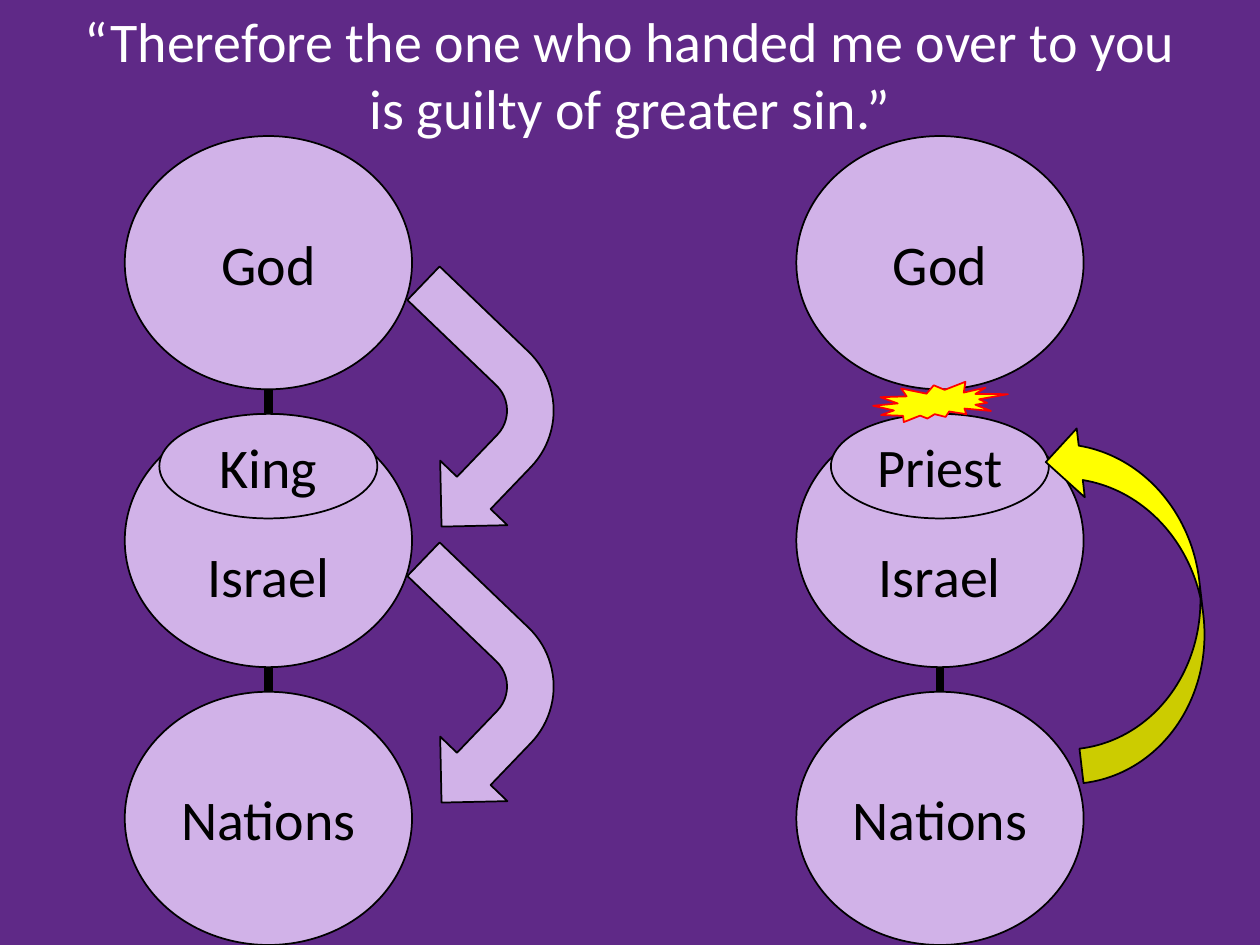
from lxml import etree
from pptx import Presentation
from pptx.dml.color import RGBColor
from pptx.enum.shapes import MSO_CONNECTOR, MSO_SHAPE
from pptx.enum.text import MSO_ANCHOR, PP_ALIGN
from pptx.oxml.ns import qn
from pptx.util import Inches, Pt

OVAL, BENT_ARROW = MSO_SHAPE.OVAL, MSO_SHAPE.BENT_ARROW
CURVED_ARROW, BURST = MSO_SHAPE.CURVED_UP_ARROW, MSO_SHAPE.EXPLOSION2
STRAIGHT = MSO_CONNECTOR.STRAIGHT
MIDDLE, TOP, CENTER = MSO_ANCHOR.MIDDLE, MSO_ANCHOR.TOP, PP_ALIGN.CENTER

# Content
TITLE = ["“Therefore the one who handed me over to you", "is guilty of greater sin.”"]
LEVELS = ["God", "Israel", "Nations"]
CHAINS = [  # left edge, mediator, mediator text size, rows followed by a link
    {"left": 0.99, "mediator": "King", "size": 32, "links": [0, 1]},
    {"left": 6.32, "mediator": "Priest", "size": 31, "links": [0, 1]},
]
COLORS = {"background": "5F2987", "lilac": "D1B2E8", "yellow": "FFFF00",
          "red": "FF0000", "black": "000000", "white": "FFFFFF"}
FONT, TEXT_SIZE = "Calibri", 32

# Grid, in inches
WIDTH, HEIGHT = 10, 7.5
OVAL_WIDTH, OVAL_HEIGHT = 2.28, 2.01
FIRST_TOP = 1.08
ROW_STEP = (HEIGHT - OVAL_HEIGHT - FIRST_TOP) / 2
MEDIATOR_WIDTH, MEDIATOR_HEIGHT = 1.73, 0.83


def color(name):
    return RGBColor.from_string(COLORS[name])


def write(text_frame, lines, size, text_color, anchor):
    text_frame.text = "\n".join(lines)
    text_frame.word_wrap = True
    text_frame.vertical_anchor = anchor
    for paragraph in text_frame.paragraphs:
        paragraph.alignment = CENTER
        for run in paragraph.runs:
            run.font.name, run.font.size = FONT, Pt(size)
            run.font.color.rgb = color(text_color)


def add_figure(slide, kind, box, fill="lilac", line="black", rotation=0):
    shape = slide.shapes.add_shape(kind, *map(Inches, box))
    shape.shadow.inherit = False
    shape.fill.solid()
    shape.fill.fore_color.rgb = color(fill)
    shape.line.color.rgb = color(line)
    shape.line.width = Pt(1)
    shape.rotation = rotation
    return shape


def add_oval(slide, box, text, size=TEXT_SIZE):
    shape = add_figure(slide, OVAL, box)
    shape.text_frame.margin_left = shape.text_frame.margin_right = 0
    write(shape.text_frame, [text], size, "black", MIDDLE)
    return shape


def add_link(slide, x, top, bottom):
    link = slide.shapes.add_connector(
        STRAIGHT, Inches(x), Inches(top), Inches(x), Inches(bottom))
    link.line.color.rgb = color("black")
    link.line.width = Pt(5)
    etree.SubElement(link._element.spPr, qn("a:effectLst"))


def add_chain(slide, chain):
    left = chain["left"]
    middle = left + OVAL_WIDTH / 2
    tops = [FIRST_TOP + row * ROW_STEP for row in range(len(LEVELS))]
    # Ovals from the bottom level up
    for level, top in reversed(list(zip(LEVELS, tops))):
        oval = add_oval(slide, (left, top, OVAL_WIDTH, OVAL_HEIGHT), level)
        if level == "Israel":  # leave room for the mediator
            oval.text_frame.margin_top = Inches(0.59)
    add_oval(slide, (middle - MEDIATOR_WIDTH / 2, tops[1], MEDIATOR_WIDTH, MEDIATOR_HEIGHT),
             chain["mediator"], chain["size"])
    for row in chain["links"]:
        add_link(slide, middle, tops[row] + OVAL_HEIGHT, tops[row + 1])


def main():
    presentation = Presentation()
    presentation.slide_width, presentation.slide_height = Inches(WIDTH), Inches(HEIGHT)
    slide = presentation.slides.add_slide(presentation.slide_layouts[5])
    slide.background.fill.solid()
    slide.background.fill.fore_color.rgb = color("background")

    # Title
    title = slide.shapes.title
    title.left, title.top, title.width, title.height = map(Inches, (0, 0, WIDTH, 1.18))
    write(title.text_frame, TITLE, TEXT_SIZE, "white", TOP)

    # Left chain with its arrows downward
    add_chain(slide, CHAINS[0])
    for row in range(2):
        add_figure(slide, BENT_ARROW, (2.89, 2.37 + row * 2.19, 1.48, 1.81), rotation=133.8)

    # Right chain with its arrow upward and the break below God
    add_chain(slide, CHAINS[1])
    add_figure(slide, CURVED_ARROW, (7.56, 4.19, 2.84, 1.1), "yellow", rotation=263.3)
    add_figure(slide, BURST, (6.93, 3.03, 1.07, 0.32), "yellow", "red")

    presentation.save("out.pptx")


if __name__ == "__main__":
    main()
